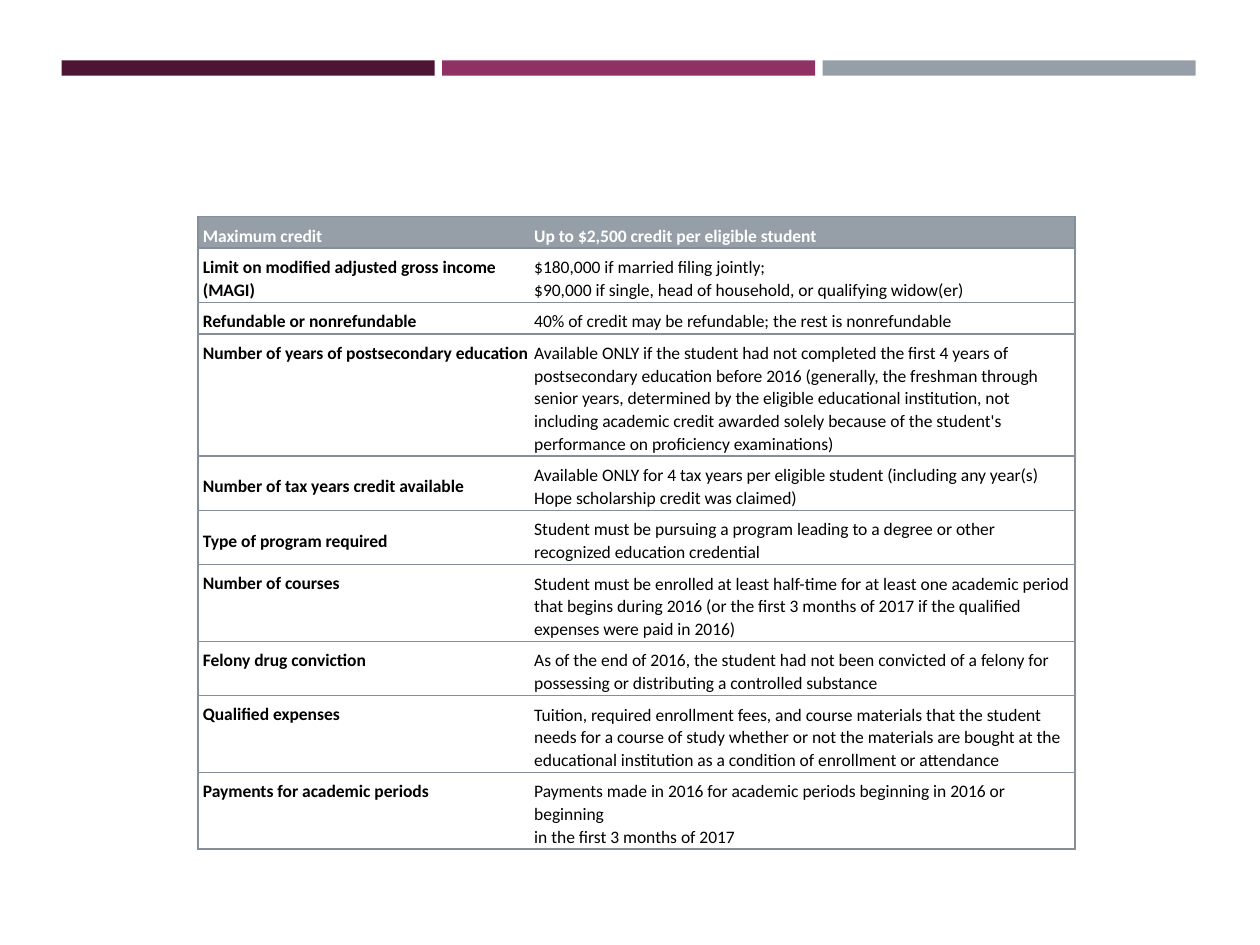
"""Build a slide with a table of education credit rules."""
from pptx import Presentation, util as u
from pptx.dml.color import RGBColor
from pptx.enum import shapes, text
from pptx.oxml import parse_xml
from pptx.oxml.ns import nsdecls

THEME = {
    "font": "Calibri", "size": 10, "lead": 1.07, "rule": 1,
    "ink": "000000", "light": "FFFFFF", "head": "969FA7", "line": "858F99",
    "bars": ["4D1434", "903163", "969FA7"],
}
TOP, MID, LOW = (text.MSO_ANCHOR.TOP, text.MSO_ANCHOR.MIDDLE,
                 text.MSO_ANCHOR.BOTTOM)
COLS = [2.66, 4.3]
ROWS = [
    (0.24, LOW, LOW, "Maximum credit",
     ["Up to $2,500 credit per eligible student"]),
    (0.41, LOW, LOW, "Limit on modified adjusted gross income (MAGI)",
     ["$180,000 if married filing jointly;",
      "$90,000 if single, head of household, or qualifying widow(er)"]),
    (0.24, LOW, LOW, "Refundable or nonrefundable",
     ["40% of credit may be refundable; the rest is nonrefundable"]),
    (0.93, TOP, LOW, "Number of years of postsecondary education",
     ["Available ONLY if the student had not completed the first 4 years of "
      "postsecondary education before 2016 (generally, the freshman through "
      "senior years, determined by the eligible educational institution, not "
      "including academic credit awarded solely because of the student's "
      "performance on proficiency examinations)"]),
    (0.41, MID, LOW, "Number of tax years credit available",
     ["Available ONLY for 4 tax years per eligible student (including any "
      "year(s) Hope scholarship credit was claimed)"]),
    (0.41, MID, LOW, "Type of program required",
     ["Student must be pursuing a program leading to a degree or other "
      "recognized education credential"]),
    (0.59, TOP, LOW, "Number of courses",
     ["Student must be enrolled at least half-time for at least one academic "
      "period that begins during 2016 (or the first 3 months of 2017 if the "
      "qualified expenses were paid in 2016)"]),
    (0.41, TOP, LOW, "Felony drug conviction",
     ["As of the end of 2016, the student had not been convicted of a felony for",
      "possessing or distributing a controlled substance"]),
    (0.59, TOP, LOW, "Qualified expenses",
     ["Tuition, required enrollment fees, and course materials that the student "
      "needs for a course of study whether or not the materials are bought at "
      "the educational institution as a condition of enrollment or attendance"]),
    (0.59, TOP, TOP, "Payments for academic periods",
     ["Payments made in 2016 for academic periods beginning in 2016 or beginning",
      "in the first 3 months of 2017"]),
]


def tint(name):
    return RGBColor.from_string(THEME[name])


def add_bars(slide):
    left, wide, gap = 0.49, 2.96, 0.06
    for i, hue in enumerate(THEME["bars"]):
        bar = slide.shapes.add_shape(
            shapes.MSO_SHAPE.RECTANGLE, u.Inches(left + i * (wide + gap)),
            u.Inches(0.48), u.Inches(wide), u.Inches(0.12))
        bar.shadow.inherit = False
        bar.fill.solid()
        bar.fill.fore_color.rgb = RGBColor.from_string(hue)
        bar.line.fill.background()


def add_rules(cell, inner):
    props = cell._tc.get_or_add_tcPr()
    for side in "LRTB":
        fill = "<a:noFill/>" if side == inner else (
            f'<a:solidFill><a:srgbClr val="{THEME["line"]}"/></a:solidFill>')
        props.append(parse_xml(
            f'<a:ln{side} {nsdecls("a")} w="{u.Pt(THEME["rule"])}">'
            f'{fill}</a:ln{side}>'))


def fill_cell(cell, lines, anchor, head, label):
    add_rules(cell, "R" if label else "L")
    if head:
        cell.fill.solid()
        cell.fill.fore_color.rgb = tint("head")
    else:
        cell.fill.background()
    cell.vertical_anchor = anchor
    cell.margin_left = u.Inches(0.04 if label else 0.01)
    cell.margin_top = u.Inches(0.06)
    cell.margin_right = u.Inches(0.04)
    cell.margin_bottom = u.Inches(0.01)
    frame = cell.text_frame
    for i, line in enumerate(lines):
        para = frame.add_paragraph() if i else frame.paragraphs[0]
        para.line_spacing = THEME["lead"]
        run = para.add_run()
        run.text = line
        font = run.font
        font.name, font.size = THEME["font"], u.Pt(THEME["size"])
        font.bold = head or label
        font.color.rgb = tint("light" if head else "ink")


def add_grid(slide):
    high = sum(row[0] for row in ROWS)
    table = slide.shapes.add_table(
        len(ROWS), len(COLS), u.Inches(1.57), u.Inches(1.72),
        u.Inches(sum(COLS)), u.Inches(high)).table
    table.first_row = table.horz_banding = False
    for col, wide in zip(table.columns, COLS):
        col.width = u.Inches(wide)
    for i, (tall, left, right, label, lines) in enumerate(ROWS):
        table.rows[i].height = u.Inches(tall)
        fill_cell(table.cell(i, 0), [label], left, i == 0, True)
        fill_cell(table.cell(i, 1), lines, right, i == 0, False)


def main():
    deck = Presentation()
    deck.slide_width, deck.slide_height = u.Inches(10), u.Inches(7.5)
    slide = deck.slides.add_slide(deck.slide_layouts[6])
    add_bars(slide)
    add_grid(slide)
    deck.save("out.pptx")


if __name__ == "__main__":
    main()
